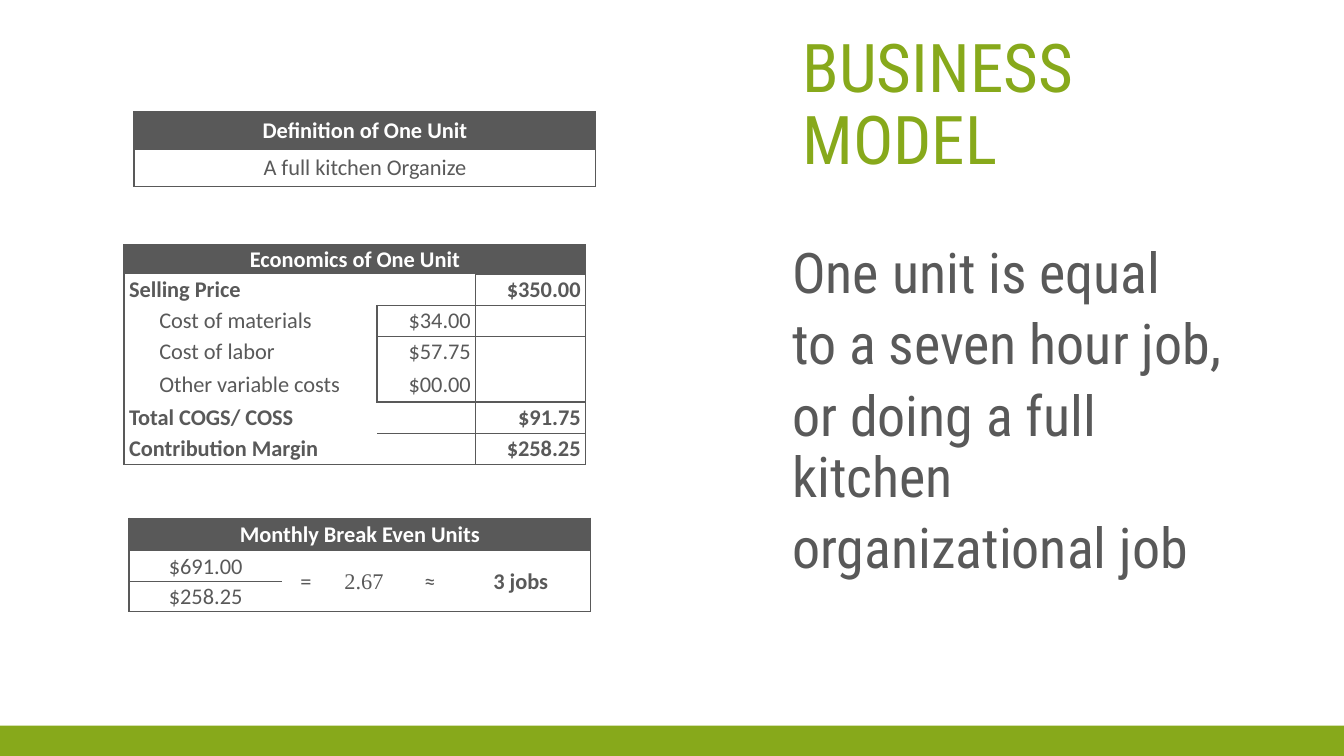
import pptx
import pptx.util
import pptx.oxml
import pptx.oxml.ns
import pptx.dml.color
import pptx.enum.text
import pptx.enum.shapes

Inches, Pt = pptx.util.Inches, pptx.util.Pt
ALIGN, ANCHOR = pptx.enum.text.PP_ALIGN, pptx.enum.text.MSO_ANCHOR
COLORS = {"green": "87A91B", "gray": "595959", "white": "FFFFFF"}
PLAIN_GRID = "{2D5ABB26-0587-4C30-8999-92F81FD0307C}"

TITLE = "BUSINESS MODEL"
SUMMARY = ["One unit is equal", "to a seven hour job,", "or doing a full kitchen", "organizational job"]

# Each style: alignment, bold, text color, fill, font, left indent
STYLES = {
    "head": (ALIGN.CENTER, True, "white", "gray", "Calibri", 0),
    "label": (ALIGN.LEFT, True, "gray", "white", "Calibri", 0),
    "item": (ALIGN.LEFT, False, "gray", "white", "Calibri", 0.3),
    "cost": (ALIGN.RIGHT, False, "gray", "white", "Calibri", 0),
    "total": (ALIGN.RIGHT, True, "gray", "white", "Calibri", 0),
    "plain": (ALIGN.CENTER, False, "gray", "white", "Calibri", 0),
    "result": (ALIGN.CENTER, True, "gray", "white", "Calibri", 0),
    "ratio": (ALIGN.CENTER, False, "gray", "white", "Times New Roman", 0),
}

# Each cell: text, style, bordered edges (left, right, top, bottom)
TABLES = [
    {
        "at": (1.33, 1.11), "columns": [4.58], "heights": [0.37, 0.37],
        "insets": (0.1, 0.05), "merges": [],
        "rows": [
            [("Definition of One Unit", "head", "LRTB")],
            [("A full kitchen Organize", "plain", "LRTB")],
        ],
    },
    {
        "at": (1.23, 2.43), "columns": [2.51, 0.98, 1.09],
        "heights": [0.29, 0.31, 0.31, 0.31, 0.34, 0.31, 0.31],
        "insets": (0.05, 0), "merges": [(0, 0, 0, 2)],
        "rows": [
            [("Economics of One Unit", "head", "LRT"), ("", "head", "T"), ("", "head", "RT")],
            [("Selling Price", "label", "L"), ("", "cost", "RB"), ("$350.00", "total", "LRTB")],
            [("Cost of materials", "item", "L"), ("$34.00", "cost", "LRT"), ("", "total", "LRT")],
            [("Cost of labor", "item", "L"), ("$57.75", "cost", "LR"), ("", "total", "LR")],
            [("Other variable costs", "item", "L"), ("$00.00", "cost", "LRB"), ("", "total", "LRB")],
            [("Total COGS/ COSS", "label", "L"), ("", "cost", "RT"), ("$91.75", "total", "LRTB")],
            [("Contribution Margin", "label", "LB"), ("", "cost", "RB"), ("$258.25", "total", "LRTB")],
        ],
    },
    {
        "at": (1.28, 5.14), "columns": [1.52, 0.36, 0.9, 0.41, 1.39],
        "heights": [0.33, 0.3, 0.3], "insets": (0.07, 0),
        "merges": [(0, 0, 0, 4)] + [(1, column, 2, column) for column in range(1, 5)],
        "rows": [
            [("Monthly Break Even Units", "head", "LRT")] + [("", "head", "T")] * 3 + [("", "head", "RT")],
            [("$691.00", "plain", "LB"), ("=", "cost", "B"), ("2.67", "ratio", "B"),
             ("≈", "plain", "B"), ("3 jobs", "result", "RB")],
            [("$258.25", "plain", "LTB")] + [("", "plain", "B")] * 3 + [("", "plain", "RB")],
        ],
    },
]


def rgb(name):
    return pptx.dml.color.RGBColor.from_string(COLORS[name])


def apply(target, **values):
    for name, value in values.items():
        setattr(target, name, value)


def format_span(span, font, size, color, bold=False):
    apply(span.font, name=font, size=Pt(size), bold=bold)
    span.font.color.rgb = rgb(color)


def add_borders(cell, edges):
    properties = cell._tc.get_or_add_tcPr()
    for position, edge in enumerate(edges):
        line = pptx.oxml.parse_xml(
            f'<a:ln{edge} {pptx.oxml.ns.nsdecls("a")} w="12700"><a:solidFill>'
            f'<a:srgbClr val="{COLORS["gray"]}"/></a:solidFill></a:ln{edge}>')
        properties.insert(position, line)


def fill_cell(cell, content, insets):
    text, style, edges = content
    align, bold, color, fill, font, indent = STYLES[style]
    side, vertical = (Inches(inset) for inset in insets)
    apply(cell, margin_left=side + Inches(indent), margin_right=side,
          margin_top=vertical, margin_bottom=vertical, vertical_anchor=ANCHOR.MIDDLE)
    cell.fill.solid()
    cell.fill.fore_color.rgb = rgb(fill)
    add_borders(cell, edges)
    para = cell.text_frame.paragraphs[0]
    para.alignment = align
    span = para.add_run()
    span.text = text
    format_span(span, font, 16, color, bold)


def add_unit_table(page, spec):
    columns, heights = spec["columns"], spec["heights"]
    frame = page.shapes.add_table(len(heights), len(columns), *map(Inches, spec["at"]),
                                  Inches(sum(columns)), Inches(sum(heights)))
    table = frame.table
    table._tbl.tblPr.find(pptx.oxml.ns.qn("a:tableStyleId")).text = PLAIN_GRID
    apply(table, first_row=False, horz_banding=False)
    for column, width in zip(table.columns, columns):
        column.width = Inches(width)
    for row, height in zip(table.rows, heights):
        row.height = Inches(height)
    for top, left, bottom, right in spec["merges"]:
        table.cell(top, left).merge(table.cell(bottom, right))
    for row, contents in enumerate(spec["rows"]):
        for column, content in enumerate(contents):
            fill_cell(table.cell(row, column), content, spec["insets"])


def write_lines(box, lines, size, color, anchor, space_before=0):
    frame = box.text_frame
    apply(frame, word_wrap=True, vertical_anchor=anchor, auto_size=pptx.enum.text.MSO_AUTO_SIZE.NONE)
    frame.text = "\n".join(lines)
    for para in frame.paragraphs:
        apply(para, alignment=ALIGN.LEFT, line_spacing=0.9, space_before=Pt(space_before))
        format_span(para.runs[0], "Roboto Condensed", size, color)


def main():
    deck = pptx.Presentation()
    apply(deck, slide_width=Inches(13.33), slide_height=Inches(7.5))
    page = deck.slides.add_slide(deck.slide_layouts[5])

    bar = page.shapes.add_shape(pptx.enum.shapes.MSO_SHAPE.RECTANGLE,
                                0, Inches(7.2), deck.slide_width, Inches(0.3))
    bar.shadow.inherit = False
    bar.fill.solid()
    bar.fill.fore_color.rgb = rgb("green")
    bar.line.fill.background()

    title = page.shapes.title
    apply(title, left=Inches(7.86), top=Inches(0.97), width=Inches(3.84), height=Inches(0.86))
    write_lines(title, [TITLE], 48, "green", ANCHOR.BOTTOM)

    summary = page.shapes.add_textbox(*map(Inches, (7.76, 2.38, 4.57, 4.28)))
    write_lines(summary, SUMMARY, 40, "gray", ANCHOR.TOP, space_before=8)

    for spec in TABLES:
        add_unit_table(page, spec)
    deck.save("out.pptx")


if __name__ == "__main__":
    main()
